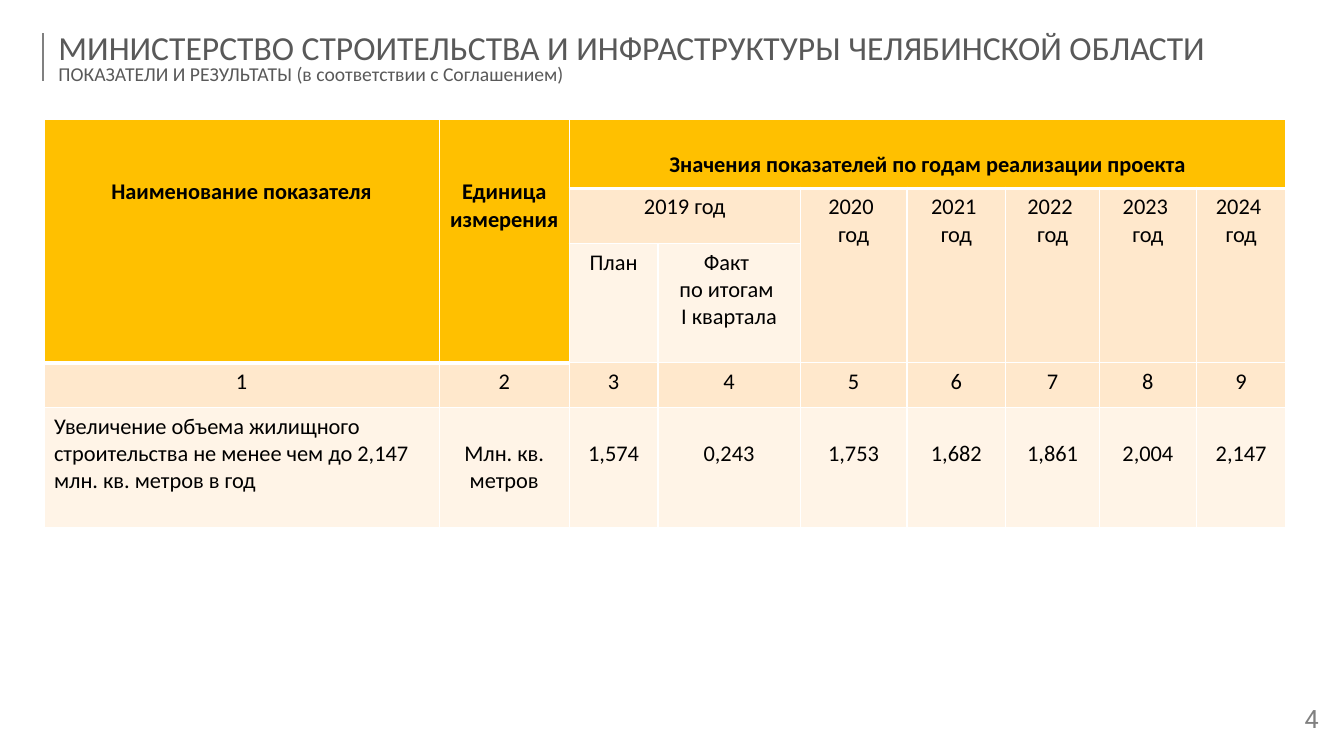
import pptx
import pptx.util
import pptx.dml.color
import pptx.enum.shapes
import pptx.enum.text
from dataclasses import dataclass
from lxml import etree
from pptx.oxml.ns import qn

ALIGN = pptx.enum.text.PP_ALIGN
MIDDLE = pptx.enum.text.MSO_ANCHOR.MIDDLE


@dataclass(frozen=True)
class Theme:
    heading_font: str = "Calibri"
    number_font: str = "Roboto"
    heading: str = "595959"
    muted: str = "808080"
    ink: str = "000000"
    border: str = "FFFFFF"
    header: str = "FFC000"
    band_dark: str = "FFE8CC"
    band_light: str = "FFF4E7"
    title_size: int = 24
    number_size: int = 18
    table_size: int = 16
    subtitle_size: int = 14
    blank_line: float = 0.27  # inches taken by one table text line
    cell_margin: float = 0.05


class Page:
    """Places elements by percentages of the slide's width and height."""

    def __init__(self, deck, theme):
        self.deck, self.theme = deck, theme
        self.slide = deck.slides.add_slide(deck.slide_layouts[5])

    def across(self, share):
        return round(self.deck.slide_width * share / 100)

    def down(self, share):
        return round(self.deck.slide_height * share / 100)

    def box(self, left, top, width, height):
        return self.across(left), self.down(top), self.across(width), self.down(height)

    def put_text(self, frame, text, sizes, color, font, align, bold=False, spacing=None):
        frame.text = text
        frame.word_wrap = True
        for index, paragraph in enumerate(frame.paragraphs):
            paragraph.alignment = align
            paragraph.line_spacing = spacing
            size = pptx.util.Pt(sizes[min(index, len(sizes) - 1)])
            for run in paragraph.runs:
                for key, value in {"name": font, "size": size, "bold": bold}.items():
                    setattr(run.font, key, value)
                run.font.color.rgb = pptx.dml.color.RGBColor.from_string(color)

    def title(self, text, area):
        heading = self.slide.shapes.title
        for key, value in zip(("left", "top", "width", "height"), self.box(*area)):
            setattr(heading, key, value)
        frame, theme = heading.text_frame, self.theme
        frame.auto_size = pptx.enum.text.MSO_AUTO_SIZE.NONE
        frame.vertical_anchor = MIDDLE
        self.put_text(frame, text, (theme.title_size, theme.subtitle_size),
                      theme.heading, theme.heading_font, ALIGN.LEFT, spacing=0.8)
        for paragraph in frame.paragraphs:
            paragraph.space_before = pptx.util.Pt(0)

    def page_number(self, text, area):
        frame = self.slide.shapes.add_textbox(*self.box(*area)).text_frame
        frame.vertical_anchor = MIDDLE
        self.put_text(frame, text, (self.theme.number_size,), self.theme.muted,
                      self.theme.number_font, ALIGN.CENTER, spacing=0.8)

    def rule(self, x, top, bottom):
        accent = self.slide.shapes.add_connector(
            pptx.enum.shapes.MSO_CONNECTOR.STRAIGHT,
            self.across(x), self.down(top), self.across(x), self.down(bottom))
        accent.line.color.rgb = pptx.dml.color.RGBColor.from_string(self.theme.muted)
        accent.line.width = pptx.util.Pt(1.5)
        etree.SubElement(accent._element.spPr, qn("a:effectLst"))

    def table(self, left, top, columns, rows):
        grid = self.slide.shapes.add_table(
            len(rows), len(columns), *self.box(left, top, sum(columns), sum(rows))).table
        for column, share in zip(grid.columns, columns):
            column.width = self.across(share)
        for row, share in zip(grid.rows, rows):
            row.height = self.down(share)
        return grid

    def cell(self, grid, row, column, text, fill, span=(1, 1), blank=0,
             bold=False, align=ALIGN.CENTER):
        theme = self.theme
        origin = grid.cell(row, column)
        if span != (1, 1):
            origin.merge(grid.cell(row + span[0] - 1, column + span[1] - 1))
        for r in range(row, row + span[0]):
            for c in range(column, column + span[1]):
                part = grid.cell(r, c)
                self.borders(part, 3 if fill == theme.header else 1)
                part.fill.solid()
                part.fill.fore_color.rgb = pptx.dml.color.RGBColor.from_string(fill)
        origin.margin_top = pptx.util.Inches(theme.cell_margin + blank * theme.blank_line)
        self.put_text(origin.text_frame, text, (theme.table_size,), theme.ink,
                      theme.heading_font, align, bold)

    def borders(self, cell, bottom):
        properties = cell._tc.get_or_add_tcPr()
        for side, width in {"lnL": 1, "lnR": 1, "lnT": 1, "lnB": bottom}.items():
            edge = etree.SubElement(properties, qn("a:" + side), w=str(int(pptx.util.Pt(width))))
            fill = etree.SubElement(edge, qn("a:solidFill"))
            etree.SubElement(fill, qn("a:srgbClr"), val=self.theme.border)


def main():
    deck = pptx.Presentation()
    deck.slide_width = pptx.util.Inches(13.33)
    deck.slide_height = pptx.util.Inches(7.5)
    theme = Theme()
    page = Page(deck, theme)

    # Heading and page number
    page.rule(3.23, 4.4, 10.67)
    page.page_number("4", (93.25, 92, 8.7, 6.67))
    page.title("МИНИСТЕРСТВО СТРОИТЕЛЬСТВА И ИНФРАСТРУКТУРЫ ЧЕЛЯБИНСКОЙ ОБЛАСТИ\n"
               "ПОКАЗАТЕЛИ И РЕЗУЛЬТАТЫ (в соответствии с Соглашением)",
               (3.6, 3.47, 101.2, 8.93))

    indicators = page.table(
        3.27, 15.73,
        columns=(29.41, 9.68, 6.6, 10.58, 7.95, 7.35, 6.98, 7.2, 6.68),
        rows=(9.2, 7.3, 15.75, 5.95, 15.9))

    # Table header
    for column, (label, span, blank) in enumerate((
            ("Наименование показателя", (3, 1), 2),
            ("Единица измерения", (3, 1), 2),
            ("Значения показателей по годам реализации проекта", (1, 7), 1))):
        page.cell(indicators, 0, column, label, theme.header, span, blank, bold=True)

    # Years, with plan and fact for the first one
    page.cell(indicators, 1, 2, "2019 год", theme.band_dark, (1, 2))
    for column, year in enumerate(range(2020, 2025), start=4):
        page.cell(indicators, 1, column, f"{year} \nгод", theme.band_dark, (2, 1))
    for column, label in enumerate(("План", "Факт \nпо итогам \nI квартала"), start=2):
        page.cell(indicators, 2, column, label, theme.band_light)

    # Column numbers
    for column in range(9):
        page.cell(indicators, 3, column, str(column + 1), theme.band_dark)

    # Indicator values
    page.cell(indicators, 4, 0,
              "Увеличение объема жилищного строительства не менее чем до 2,147 "
              "млн. кв. метров в год", theme.band_light, align=ALIGN.LEFT)
    values = ("Млн. кв. метров", "1,574", "0,243", "1,753", "1,682", "1,861", "2,004", "2,147")
    for column, value in enumerate(values, start=1):
        page.cell(indicators, 4, column, value, theme.band_light, blank=1)

    deck.save("out.pptx")


if __name__ == "__main__":
    main()
